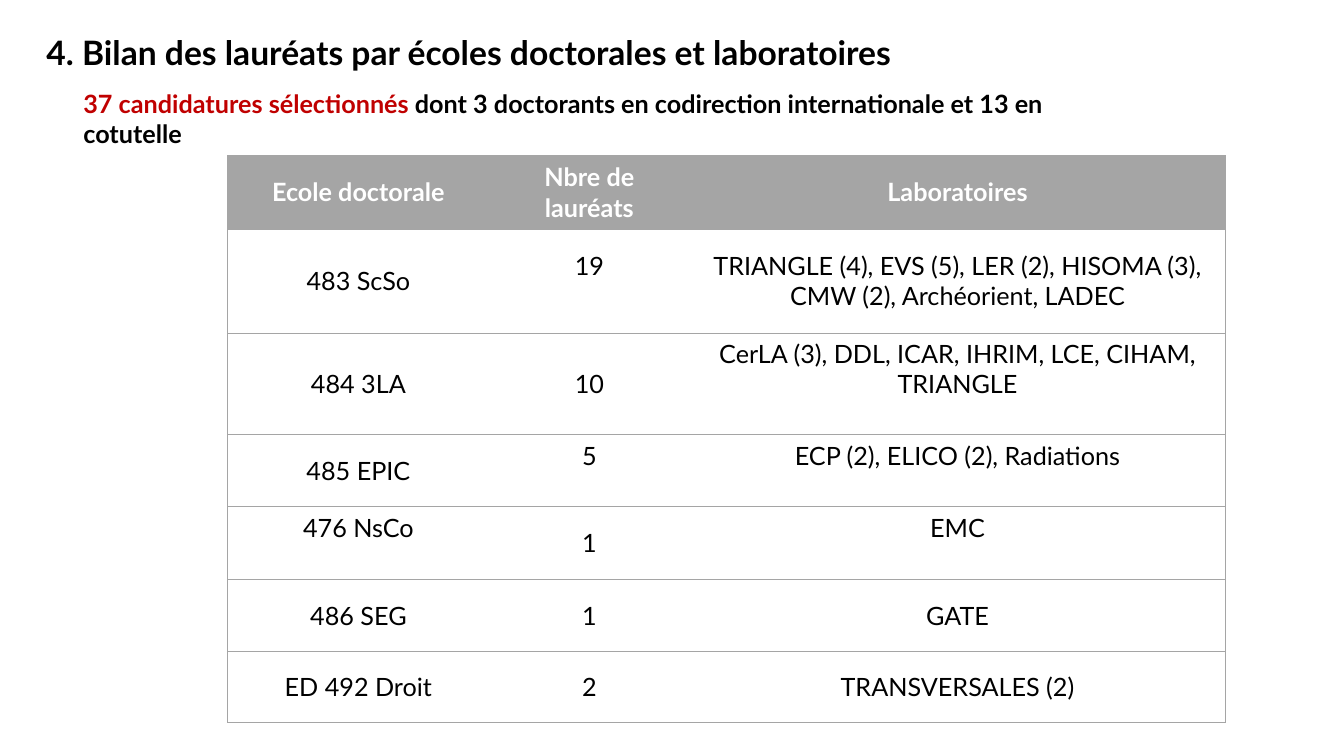
from lxml.etree import SubElement
from pptx import Presentation
from pptx.dml.color import RGBColor
from pptx.enum.text import MSO_ANCHOR, MSO_AUTO_SIZE, PP_ALIGN
from pptx.oxml.ns import qn
from pptx.util import Pt

BLACK = RGBColor(0, 0, 0)
WHITE = RGBColor(255, 255, 255)
RED = RGBColor(0xC0, 0, 0)
GRAY = RGBColor(0xA5, 0xA5, 0xA5)


def write(para, text, size=18, color=BLACK, bold=False, align=PP_ALIGN.LEFT):
    run = para.add_run()
    run.text = text
    run.font.name = "Lato"
    run.font.size = Pt(size)
    run.font.bold = bold
    run.font.color.rgb = color
    para.alignment = align


def border(cell, side, shown):
    line = SubElement(cell._tc.get_or_add_tcPr(), qn("a:" + side), w=str(Pt(0.5)))
    if shown:
        fill = SubElement(line, qn("a:solidFill"))
        SubElement(fill, qn("a:srgbClr"), val=str(GRAY))
    else:
        SubElement(line, qn("a:noFill"))


deck = Presentation()
deck.slide_width = Pt(960)
deck.slide_height = Pt(540)
slide = deck.slides.add_slide(deck.slide_layouts[5])

title = slide.shapes.title
title.left, title.top, title.width, title.height = Pt(26), Pt(19.5), Pt(908), Pt(36)
lead = slide.shapes.add_textbox(Pt(52.5), Pt(59.5), Pt(764.5), Pt(51))
for box in (title, lead):
    frame = box.text_frame
    frame.word_wrap = True
    frame.auto_size = MSO_AUTO_SIZE.NONE
    frame.vertical_anchor = MSO_ANCHOR.TOP
    frame.paragraphs[0].space_after = Pt(6)

write(title.text_frame.paragraphs[0],
      "4. Bilan des lauréats par écoles doctorales et laboratoires", size=24, bold=True)
para = lead.text_frame.paragraphs[0]
write(para, "37 candidatures sélectionnés ", color=RED, bold=True)
write(para, "dont 3 doctorants en codirection internationale et 13 en cotutelle", bold=True)

rows = [
    ("Ecole doctorale", "Nbre de lauréats", "Laboratoires"),
    ("483 ScSo", "19",
     "TRIANGLE (4), EVS (5), LER (2), HISOMA (3), CMW (2), Archéorient, LADEC"),
    ("484 3LA", "10", "CerLA (3), DDL, ICAR, IHRIM, LCE, CIHAM, TRIANGLE"),
    ("485 EPIC", "5", "ECP (2), ELICO (2), Radiations"),
    ("476 NsCo", "1", "EMC"),
    ("486 SEG", "1", "GATE"),
    ("ED 492 Droit", "2", "TRANSVERSALES (2)"),
]
wide = [187, 143, 383]
high = [52.5, 74.5, 72, 52, 52, 51.5, 50.5]
raised = {(1, 1), (2, 2), (3, 1), (3, 2), (4, 0), (4, 2)}

table = slide.shapes.add_table(
    len(rows), len(wide), Pt(162.5), Pt(111), Pt(sum(wide)), Pt(sum(high))).table
table.horz_banding = False
for col, size in zip(table.columns, wide):
    col.width = Pt(size)
for row, size in zip(table.rows, high):
    row.height = Pt(size)

for r, texts in enumerate(rows):
    head = r == 0
    for c, text in enumerate(texts):
        cell = table.cell(r, c)
        border(cell, "lnL", c == 0)
        border(cell, "lnR", c == len(wide) - 1)
        border(cell, "lnT", True)
        border(cell, "lnB", True)
        cell.fill.solid()
        cell.fill.fore_color.rgb = GRAY if head else WHITE
        cell.vertical_anchor = MSO_ANCHOR.MIDDLE
        if (r, c) in raised:
            cell.margin_bottom = Pt(25)
        write(cell.text_frame.paragraphs[0], text, color=WHITE if head else BLACK,
              bold=head, align=PP_ALIGN.CENTER)

deck.save("out.pptx")
